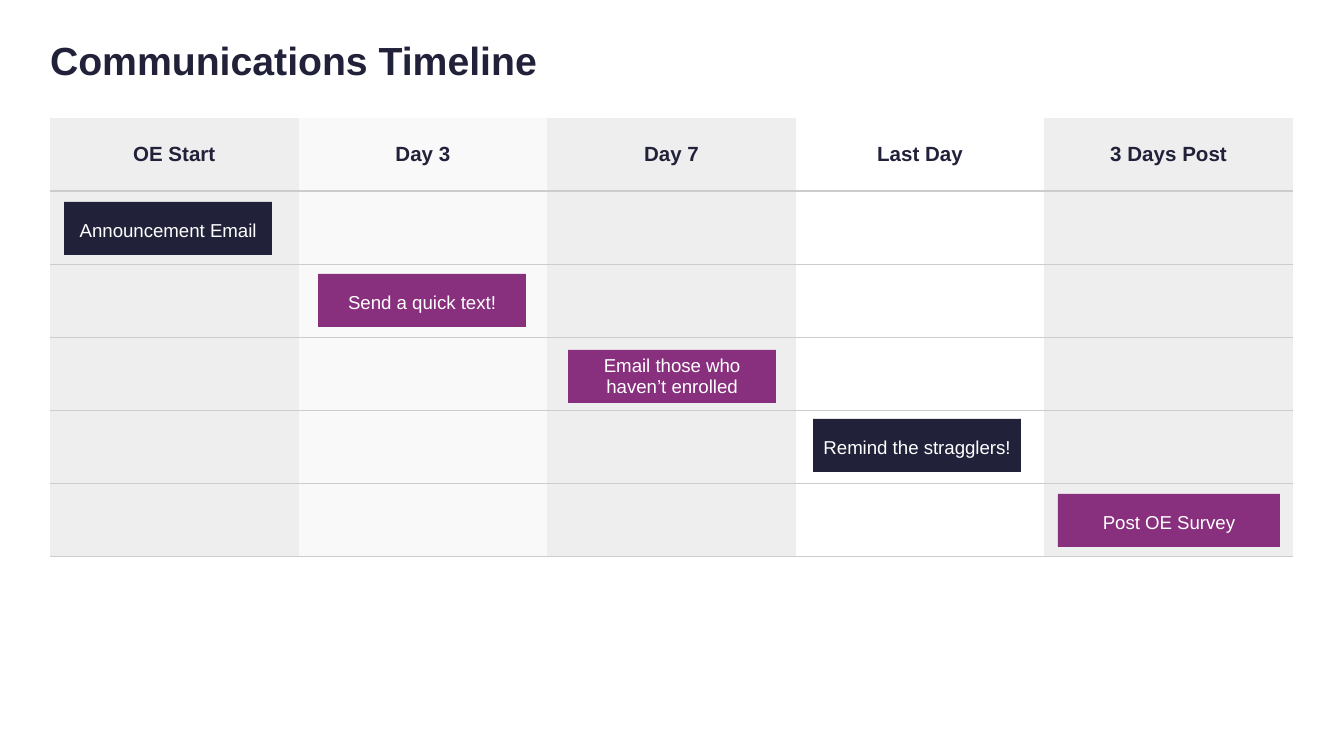
from lxml.etree import SubElement
from pptx import Presentation
from pptx.dml.color import RGBColor
from pptx.enum.shapes import MSO_SHAPE
from pptx.enum.text import MSO_ANCHOR as Anchor, MSO_AUTO_SIZE as AutoSize, PP_ALIGN as Align
from pptx.oxml.ns import qn
from pptx.util import Pt

NAVY = RGBColor(0x21, 0x21, 0x3A)
PLUM = RGBColor(0x88, 0x2F, 0x7D)
WHITE = RGBColor(0xFF, 0xFF, 0xFF)
GREY = RGBColor(0xEE, 0xEE, 0xEE)
PALE = RGBColor(0xF9, 0xF9, 0xF9)
RULE = RGBColor(0xCC, 0xCC, 0xCC)

TITLE = "Communications Timeline"
COLUMNS = [
    ("OE Start", GREY),
    ("Day 3", PALE),
    ("Day 7", GREY),
    ("Last Day", WHITE),
    ("3 Days Post", GREY),
]
MESSAGES = [
    ("Announcement Email", NAVY, 64, 202, 208, 1.14),
    ("Send a quick text!", PLUM, 318, 274, 208, 1.14),
    ("Email those who haven’t enrolled", PLUM, 568, 350, 208, 0.94),
    ("Remind the stragglers!", NAVY, 813, 419, 208, 1.14),
    ("Post OE Survey", PLUM, 1058, 494, 222, 1.14),
]
MESSAGE_HEIGHT = 53
GRID = (50, 118, 1243, 439)
ROW_COUNT = len(MESSAGES) + 1


def px(length):
    return round(length * 914400 / 134.4)


def style_text(para, size, color, align, bold=False):
    para.alignment = align
    para.font.name = "Arial"
    para.font.size = Pt(size)
    para.font.bold = bold
    para.font.color.rgb = color


def set_margins(frame, side, top):
    frame.margin_left = frame.margin_right = px(side)
    frame.margin_top = frame.margin_bottom = px(top)


def set_borders(cell, top, bottom):
    properties = cell._tc.get_or_add_tcPr()
    for tag, width in (("a:lnL", 0), ("a:lnR", 0), ("a:lnT", top), ("a:lnB", bottom)):
        line = SubElement(properties, qn(tag), w=str(Pt(width)))
        if width:
            fill = SubElement(line, qn("a:solidFill"))
            SubElement(fill, qn("a:srgbClr"), val=str(RULE))
        else:
            SubElement(line, qn("a:noFill"))


def add_title(slide):
    title = slide.shapes.title
    title.left, title.top, title.width, title.height = map(px, (50, 44, 780, 38))
    frame = title.text_frame
    frame.text = TITLE
    frame.auto_size = AutoSize.NONE
    frame.vertical_anchor = Anchor.MIDDLE
    set_margins(frame, 0, 0)
    para = frame.paragraphs[0]
    para.line_spacing = 0.85
    style_text(para, 21, NAVY, Align.LEFT, bold=True)


def add_grid(slide):
    frame = slide.shapes.add_table(ROW_COUNT, len(COLUMNS), *map(px, GRID))
    table = frame.table
    table.first_row = table.horz_banding = False
    rules = [0, 1.5] + [0.75] * (ROW_COUNT - 1)
    for row in range(ROW_COUNT):
        for column, (heading, color) in enumerate(COLUMNS):
            cell = table.cell(row, column)
            set_borders(cell, rules[row], rules[row + 1])
            cell.fill.solid()
            cell.fill.fore_color.rgb = color
            if row == 0:
                cell.text = heading
                cell.vertical_anchor = Anchor.MIDDLE
                set_margins(cell, 11, 5)
                style_text(cell.text_frame.paragraphs[0], 11, NAVY, Align.CENTER, bold=True)


def add_message(slide, text, color, left, top, width, spacing):
    box = slide.shapes.add_shape(
        MSO_SHAPE.RECTANGLE, *map(px, (left, top, width, MESSAGE_HEIGHT)))
    box.shadow.inherit = False
    box.fill.solid()
    box.fill.fore_color.rgb = color
    box.line.fill.background()
    frame = box.text_frame
    frame.text = text
    frame.word_wrap = True
    frame.vertical_anchor = Anchor.MIDDLE
    set_margins(frame, 9, 5)
    para = frame.paragraphs[0]
    para.line_spacing = spacing
    style_text(para, 10, WHITE, Align.CENTER)


def main():
    deck = Presentation()
    deck.slide_width, deck.slide_height = px(1344), px(756)
    slide = deck.slides.add_slide(deck.slide_layouts[5])
    add_grid(slide)
    for message in MESSAGES:
        add_message(slide, *message)
    add_title(slide)
    deck.save("out.pptx")


if __name__ == "__main__":
    main()
